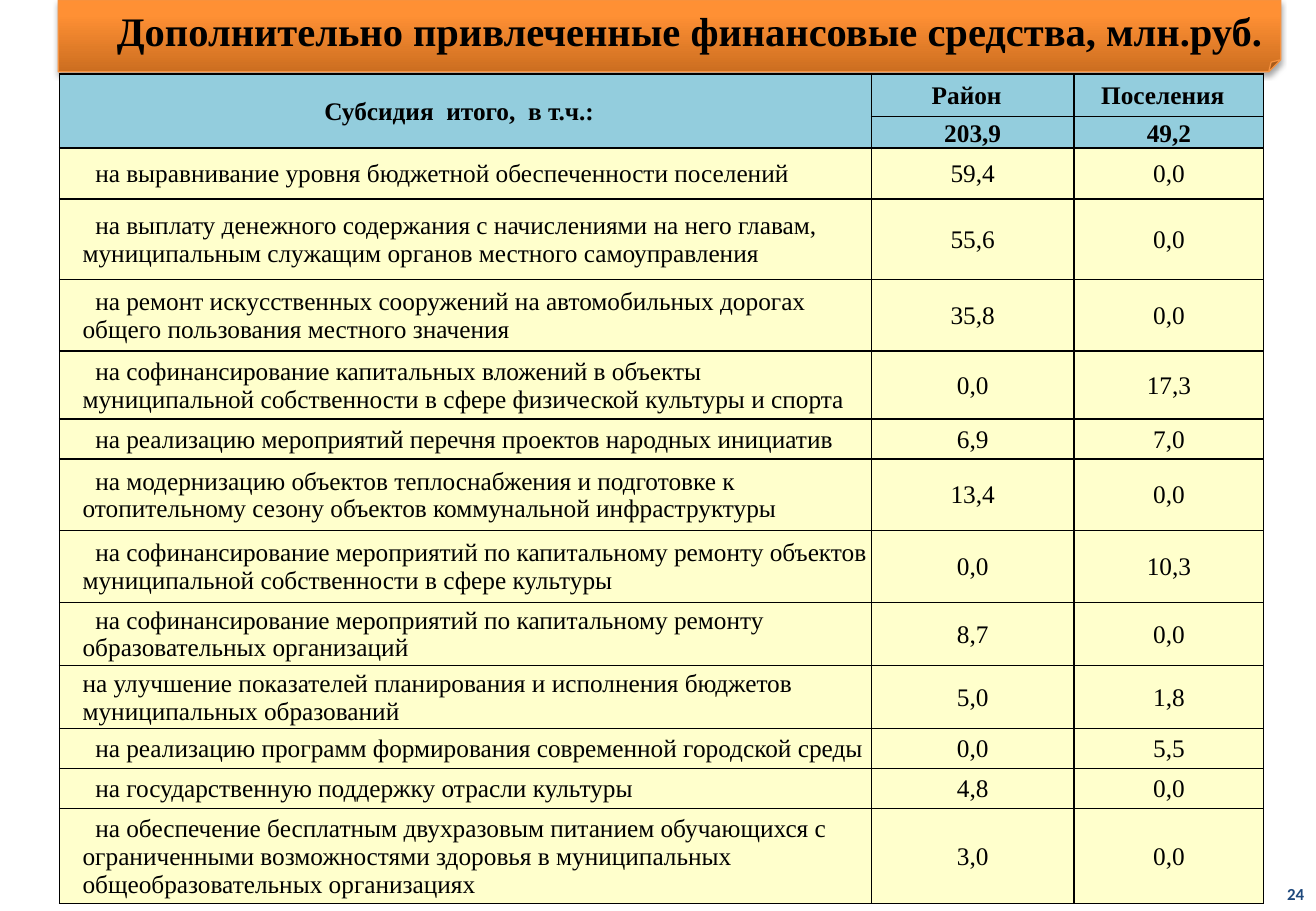
from lxml import etree
from pptx import Presentation
from pptx import util as u
from pptx.dml.color import RGBColor
from pptx.enum import shapes, text
from pptx.oxml import parse_xml
from pptx.oxml.ns import nsdecls, qn

COLORS = {
    "black": "000000", "header": "93CDDD", "body": "FFFFCC", "number": "1F497D",
    "banner_line": "F69240", "banner_dark": "CC6E20", "banner_mid": "FF9034", "banner_light": "FF9136",
}
SERIF = "Times New Roman"
HEADINGS = ["Субсидия  итого,  в т.ч.:", "Район", "Поселения"]
TOTALS = ["", "203,9", "49,2"]
SUBSIDIES = [
    ("на выравнивание уровня бюджетной обеспеченности поселений", "59,4", "0,0"),
    ("на выплату денежного содержания с начислениями на него главам, муниципальным служащим органов местного самоуправления", "55,6", "0,0"),
    ("на ремонт искусственных сооружений на автомобильных дорогах общего пользования местного значения", "35,8", "0,0"),
    ("на софинансирование капитальных вложений в объекты муниципальной собственности в сфере физической культуры и спорта", "0,0", "17,3"),
    ("на реализацию мероприятий перечня проектов народных инициатив", "6,9", "7,0"),
    ("на модернизацию объектов теплоснабжения и подготовке к отопительному сезону объектов коммунальной инфраструктуры", "13,4", "0,0"),
    ("на софинансирование мероприятий по капитальному ремонту объектов муниципальной собственности в сфере культуры", "0,0", "10,3"),
    ("на софинансирование мероприятий по капитальному ремонту образовательных организаций", "8,7", "0,0"),
    ("на улучшение показателей планирования и исполнения бюджетов муниципальных образований", "5,0", "1,8"),
    ("на реализацию программ формирования современной городской среды", "0,0", "5,5"),
    ("на государственную поддержку отрасли культуры", "4,8", "0,0"),
    ("на обеспечение бесплатным двухразовым питанием обучающихся с ограниченными возможностями здоровья в муниципальных общеобразовательных организациях", "3,0", "0,0"),
]
UNBULLETED = SUBSIDIES[8][0]
COLUMN_WIDTHS = [6.68, 1.67, 1.56]
ROW_HEIGHTS = [0.35, 0.26, 0.42, 0.66, 0.59, 0.56, 0.33, 0.59, 0.59, 0.52, 0.52, 0.33, 0.33, 0.78]


def write(para, words, align, color="black", **formats):
    para.alignment = align
    span = para.add_run()
    span.text = words
    for name, value in formats.items():
        setattr(span.font, name, value)
    span.font.color.rgb = RGBColor.from_string(COLORS[color])


deck = Presentation()
deck.slide_width, deck.slide_height = u.Inches(10.83), u.Inches(7.5)
page = deck.slides.add_slide(deck.slide_layouts[6])

banner = page.shapes.add_shape(
    shapes.MSO_SHAPE.FOLDED_CORNER, u.Inches(0.48), 0, u.Inches(10.06), u.Inches(0.59))
banner.line.color.rgb = RGBColor.from_string(COLORS["banner_line"])
banner.line.width = u.Pt(0.75)
stops = "".join(
    f'<a:gs pos="{percent * 1000}"><a:srgbClr val="{COLORS[name]}"/></a:gs>'
    for percent, name in [(0, "banner_dark"), (80, "banner_mid"), (100, "banner_light")])
banner_line = banner.line._get_or_add_ln()
banner_line.addprevious(parse_xml(
    f'<a:gradFill {nsdecls("a")} rotWithShape="1"><a:gsLst>{stops}</a:gsLst>'
    '<a:lin ang="16200000" scaled="0"/></a:gradFill>'))
banner_line.addnext(parse_xml(
    f'<a:effectLst {nsdecls("a")}><a:outerShdw blurRad="{u.Pt(3.1)}" dist="{u.Pt(1.8)}" '
    f'dir="5400000" rotWithShape="0"><a:srgbClr val="{COLORS["black"]}">'
    '<a:alpha val="35000"/></a:srgbClr></a:outerShdw></a:effectLst>'))

LABELS = [
    ((0.69, 0, 9.97, 0.5), "Дополнительно привлеченные финансовые средства, млн.руб.",
     text.PP_ALIGN.CENTER, text.MSO_ANCHOR.TOP, {"name": SERIF, "size": u.Pt(24), "color": "black"}),
    ((9.9, 7.21, 0.93, 0.29), "24",
     text.PP_ALIGN.RIGHT, text.MSO_ANCHOR.MIDDLE, {"name": "Calibri", "size": u.Pt(10), "color": "number"}),
]
for place, words, align, anchor, formats in LABELS:
    box = page.shapes.add_textbox(*map(u.Inches, place))
    box.text_frame.word_wrap = True
    box.text_frame.vertical_anchor = anchor
    write(box.text_frame.paragraphs[0], words, align, bold=True, **formats)

rows = [HEADINGS, TOTALS, *SUBSIDIES]
table = page.shapes.add_table(
    len(rows), len(COLUMN_WIDTHS), u.Inches(0.49), u.Inches(0.61),
    u.Inches(sum(COLUMN_WIDTHS)), u.Inches(sum(ROW_HEIGHTS))).table
for column, width in zip(table.columns, COLUMN_WIDTHS):
    column.width = u.Inches(width)
for row, height in zip(table.rows, ROW_HEIGHTS):
    row.height = u.Inches(height)
table.cell(0, 0).merge(table.cell(1, 0))

for row_index, values in enumerate(rows):
    in_header = row_index < 2
    for column_index, words in enumerate(values):
        cell = table.cell(row_index, column_index)
        is_purpose = column_index == 0 and not in_header
        margins = {
            "margin_left": 0.19 if is_purpose else 0.01, "margin_top": 0.01,
            "margin_right": 0.11 if row_index == 0 else 0.01, "margin_bottom": 0,
        }
        for name, value in margins.items():
            setattr(cell, name, u.Inches(value))
        cell.vertical_anchor = text.MSO_ANCHOR.BOTTOM if row_index == 1 else text.MSO_ANCHOR.MIDDLE
        properties = cell._tc.get_or_add_tcPr()
        for side in ("lnL", "lnR", "lnT", "lnB"):
            properties.append(parse_xml(
                f'<a:{side} {nsdecls("a")} w="{u.Pt(1)}"><a:solidFill>'
                f'<a:srgbClr val="{COLORS["black"]}"/></a:solidFill></a:{side}>'))
        cell.fill.solid()
        cell.fill.fore_color.rgb = RGBColor.from_string(COLORS["header" if in_header else "body"])
        if not words:
            continue
        para = cell.text_frame.paragraphs[0]
        if is_purpose and words != UNBULLETED:
            bullet = para._p.get_or_add_pPr()
            bullet_color = etree.SubElement(bullet, qn("a:buClr"))
            etree.SubElement(bullet_color, qn("a:srgbClr"), val=COLORS["black"])
            etree.SubElement(bullet, qn("a:buChar"), char=" ")
        align = text.PP_ALIGN.LEFT if is_purpose else text.PP_ALIGN.CENTER
        write(para, words, align, name=SERIF, size=u.Pt(15), bold=in_header)

deck.save("out.pptx")
